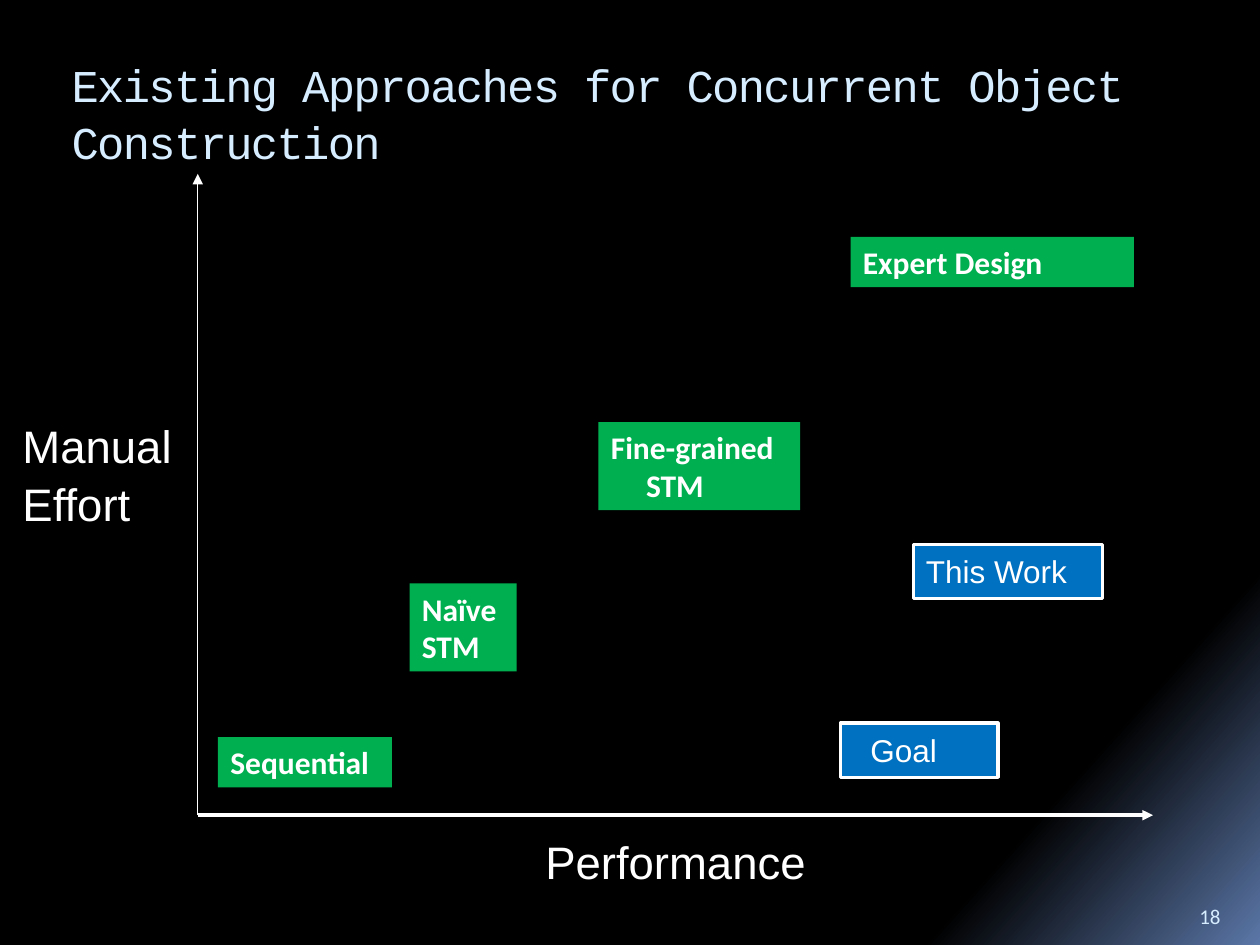
from copy import deepcopy
from dataclasses import dataclass

from lxml.etree import SubElement
from pptx import Presentation
from pptx.dml.color import RGBColor
from pptx.enum.shapes import MSO_CONNECTOR as Connector, MSO_SHAPE as Preset
from pptx.enum.text import MSO_ANCHOR as Anchor, PP_ALIGN as Align
from pptx.oxml.ns import qn
from pptx.slide import Slide
from pptx.util import Pt

PX = 9144


@dataclass(frozen=True)
class Theme:
    black: str = "000000"
    glow: str = "5B77A8"
    white: str = "FFFFFF"
    pale: str = "D6ECFF"
    green: str = "00B050"
    blue: str = "0070C0"
    title_size: int = 26
    axis_size: int = 26
    box_size: int = 18
    number_size: int = 12


THEME = Theme()


@dataclass(frozen=True)
class Style:
    font: str
    size: int
    color: str = THEME.white
    bold: bool = False
    spacing: float = 1.0
    tracking: int = 0
    fill: str = ""
    outline: str = ""


@dataclass(frozen=True)
class Label:
    text: str
    left: int
    top: int
    width: int
    height: int
    style: Style
    anchor: Anchor = Anchor.TOP
    wrap: bool = True
    last_indent: int = 0


@dataclass(frozen=True)
class Axis:
    end_x: int
    end_y: int
    weight: float


TITLE = Style("Courier New", THEME.title_size, THEME.pale, spacing=1.05, tracking=-100)
AXIS_NAME = Style("Arial", THEME.axis_size, spacing=1.05)
EXISTING = Style("Calibri", THEME.box_size, bold=True, fill=THEME.green)
PROPOSED = Style("Arial", THEME.box_size, spacing=1.05, fill=THEME.blue, outline=THEME.white)
NUMBER = Style("Calibri", THEME.number_size, THEME.pale)

ORIGIN = (157, 647)
AXES = [Axis(915, 647, 2), Axis(157, 138, 0.75)]
LABELS = [
    Label("Existing Approaches for Concurrent Object Construction",
          47, 39, 922, 100, TITLE, Anchor.BOTTOM),
    Label("Performance", 423, 655, 227, 53, AXIS_NAME, wrap=False),
    Label("Manual\nEffort", 8, 325, 139, 97, AXIS_NAME, wrap=False),
    Label("Sequential", 173, 585, 138, 40, EXISTING),
    Label("Naïve\nSTM", 325, 463, 85, 70, EXISTING),
    Label("Fine-grained\nSTM", 475, 335, 160, 70, EXISTING, last_indent=28),
    Label("Expert Design", 675, 188, 225, 40, EXISTING),
    Label("This Work", 725, 432, 150, 43, PROPOSED),
    Label("Goal", 667, 574, 125, 43, PROPOSED, last_indent=14),
    Label("18", 942, 702, 50, 40, NUMBER, Anchor.BOTTOM),
]


def rgb(color: str) -> RGBColor:
    return RGBColor.from_string(color)


def paint_background(slide: Slide) -> None:
    fill = slide.background.fill
    fill.gradient()
    fill.gradient_angle = 318
    stop_list = next(slide.element.iter(qn("a:gsLst")))
    stop_list.insert(1, deepcopy(stop_list[0]))
    stops = [(0, THEME.black), (0.84, THEME.black), (1, THEME.glow)]
    for stop, (position, color) in zip(fill.gradient_stops, stops):
        stop.position = position
        stop.color.rgb = rgb(color)


def draw_axis(slide: Slide, axis: Axis) -> None:
    ends = [value * PX for value in (*ORIGIN, axis.end_x, axis.end_y)]
    connector = slide.shapes.add_connector(Connector.STRAIGHT, *ends)
    connector.line.color.rgb = rgb(THEME.white)
    connector.line.width = Pt(axis.weight)
    SubElement(connector.line._get_or_add_ln(), qn("a:tailEnd"), type="triangle")
    SubElement(connector._element.spPr, qn("a:effectLst"))


def draw_label(slide: Slide, label: Label) -> None:
    style = label.style
    place = [value * PX for value in (label.left, label.top, label.width, label.height)]
    if style.fill:
        shape = slide.shapes.add_shape(Preset.RECTANGLE, *place)
        shape.shadow.inherit = False
        shape.fill.solid()
        shape.fill.fore_color.rgb = rgb(style.fill)
        if style.outline:
            shape.line.color.rgb = rgb(style.outline)
            shape.line.width = Pt(2)
        else:
            shape.line.fill.background()
    else:
        shape = slide.shapes.add_textbox(*place)
    frame = shape.text_frame
    frame.text = label.text
    frame.word_wrap = label.wrap
    frame.vertical_anchor = label.anchor
    for paragraph in frame.paragraphs:
        paragraph.alignment = Align.LEFT
        paragraph.line_spacing = style.spacing
        for run in paragraph.runs:
            run.font.name = style.font
            run.font.size = Pt(style.size)
            run.font.bold = style.bold
            run.font.color.rgb = rgb(style.color)
            if style.tracking:
                run.font._element.set("spc", str(style.tracking))
    if label.last_indent:
        properties = frame.paragraphs[-1]._p.get_or_add_pPr()
        properties.set("marL", str(label.last_indent * PX))


def main() -> None:
    presentation = Presentation()
    presentation.slide_width = 1000 * PX
    presentation.slide_height = 750 * PX
    slide = presentation.slides.add_slide(presentation.slide_layouts[6])
    paint_background(slide)
    for axis in AXES:
        draw_axis(slide, axis)
    for label in LABELS:
        draw_label(slide, label)
    presentation.save("out.pptx")


if __name__ == "__main__":
    main()
